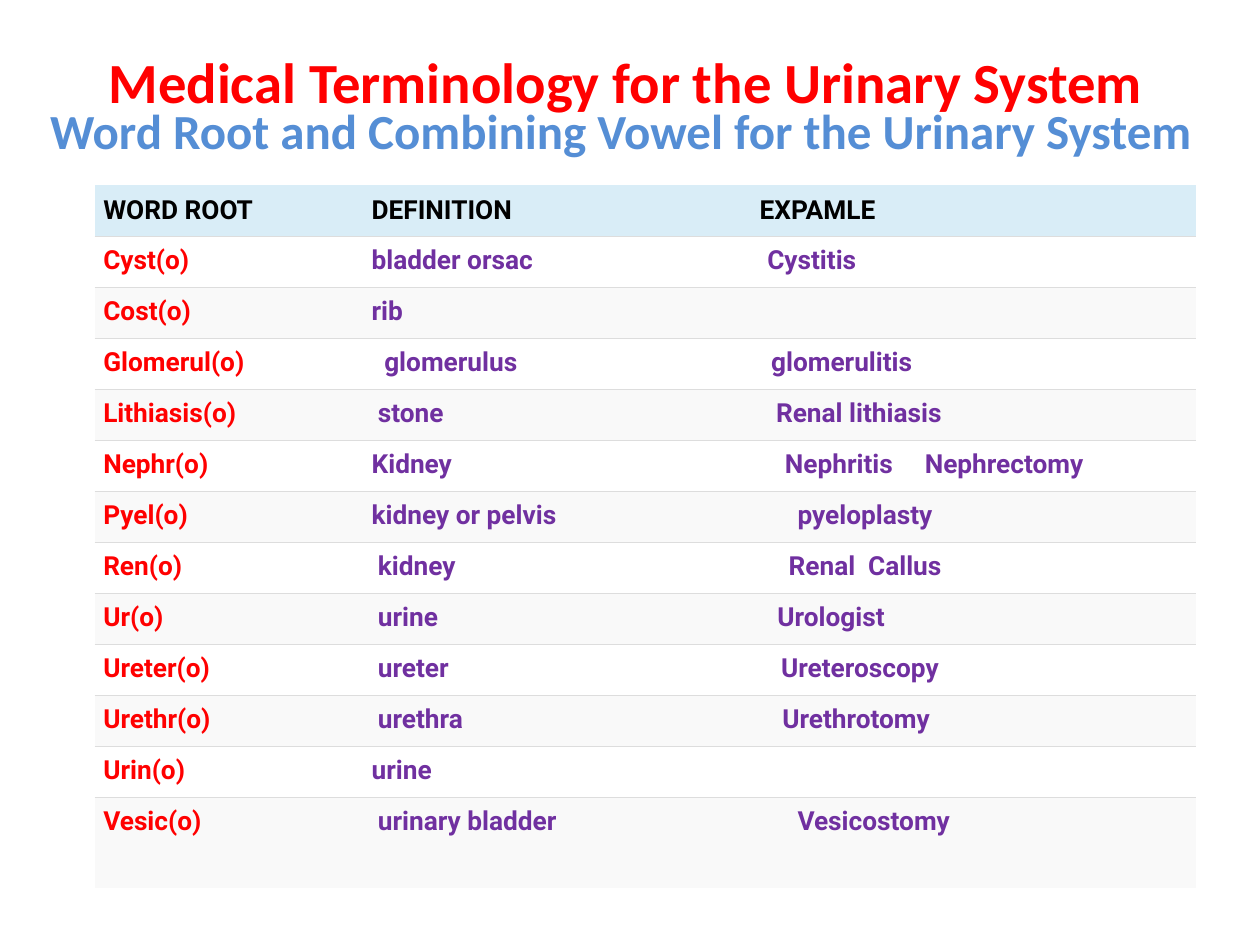
from lxml import etree
from pptx import Presentation
from pptx.dml.color import RGBColor
from pptx.enum.text import MSO_ANCHOR, PP_ALIGN
from pptx.oxml.ns import qn
from pptx.util import Inches, Pt

CENTER, LEFT = PP_ALIGN.CENTER, PP_ALIGN.LEFT
TOP, MIDDLE = MSO_ANCHOR.TOP, MSO_ANCHOR.MIDDLE
RED, BLUE, PURPLE, BLACK = "FF0000", "558ED5", "7030A0", "000000"
HEADER_FILL, ROW_FILLS, RULE = "D9EDF7", ("FFFFFF", "F9F9F9"), "DDDDDD"
NO_STYLE = "{2D5ABB26-0587-4C30-8999-92F81FD0307C}"


def color(value):
    return RGBColor.from_string(value)


def write(tf, text, size=15, font="Roboto", fill=BLACK, align=LEFT, tabs=()):
    """Write one bold paragraph; tabs are distances in inches."""
    p = tf.paragraphs[0]
    p.alignment = align
    if tabs:
        tab_list = etree.SubElement(p._p.get_or_add_pPr(), qn("a:tabLst"))
        for pos in tabs:
            etree.SubElement(tab_list, qn("a:tab"), pos=str(Inches(pos)), algn="l")
    r = p.add_run()
    r.text = text
    r.font.name, r.font.size, r.font.bold = font, Pt(size), True
    r.font.color.rgb = color(fill)


prs = Presentation()
prs.slide_width, prs.slide_height = Inches(10), Inches(7.5)
s = prs.slides.add_slide(prs.slide_layouts[6])

# Headings: text, left, top, width, height, size, colour
headings = [
    ("Medical Terminology for the Urinary System", 0.12, 0.37, 9.69, 0.55, 32.4, RED),
    ("Word Root and Combining Vowel for the Urinary System", 0.12, 0.8, 9.61, 0.48, 28, BLUE),
]
for text, left, top, width, height, size, fill in headings:
    tf = s.shapes.add_textbox(Inches(left), Inches(top), Inches(width), Inches(height)).text_frame
    tf.word_wrap = True
    tf.margin_left = tf.margin_right = tf.margin_top = tf.margin_bottom = 0
    write(tf, text, size=size, font="Calibri", fill=fill, align=CENTER)

# Table rows: word root, definition and example, tab stops
rows = [
    ("WORD ROOT", "DEFINITION\tEXPAMLE", (3.08,)),
    ("Cyst(o)", "bladder orsac\tCystitis", (3.14,)),
    ("Cost(o)", "rib", ()),
    ("Glomerul(o)", "\tglomerulus\tglomerulitis", (0.1, 3.17)),
    ("Lithiasis(o)", "\tstone\tRenal lithiasis", (0.05, 3.21)),
    ("Nephr(o)", "Kidney\tNephritis\tNephrectomy", (3.28, 4.39)),
    ("Pyel(o)", "kidney or pelvis\tpyeloplasty", (3.38,)),
    ("Ren(o)", "\tkidney\tRenal\tCallus", (0.05, 3.31, 3.94)),
    ("Ur(o)", "\turine\tUrologist", (0.05, 3.22)),
    ("Ureter(o)", "\tureter\tUreteroscopy", (0.05, 3.25)),
    ("Urethr(o)", "\turethra\tUrethrotomy", (0.05, 3.26)),
    ("Urin(o)", "urine", ()),
    ("Vesic(o)", "\turinary bladder\tVesicostomy", (0.05, 3.38)),
]
last = len(rows) - 1
table_height, last_height = Inches(5.58), Inches(0.72)
table = s.shapes.add_table(len(rows), 2, Inches(0.75), Inches(1.47),
                           Inches(8.74), table_height).table
table.horz_banding = False
table._tbl.tblPr.find(qn("a:tableStyleId")).text = NO_STYLE
for column, width in zip(table.columns, (2.13, 6.61)):
    column.width = Inches(width)

for i, (root, meaning, tabs) in enumerate(rows):
    header = i == 0
    table.rows[i].height = last_height if i == last else (table_height - last_height) // last
    texts = ((root, BLACK if header else RED, ()),
             (meaning, BLACK if header else PURPLE, tabs))
    for j, (text, fill, stops) in enumerate(texts):
        cell = table.cell(i, j)
        cell.margin_left = cell.margin_right = Inches(0.07)
        cell.margin_top = cell.margin_bottom = Inches(0.07)
        cell.vertical_anchor = MIDDLE if header else TOP
        cell.fill.solid()
        cell.fill.fore_color.rgb = color(HEADER_FILL if header else ROW_FILLS[(i - 1) % 2])
        write(cell.text_frame, text, fill=fill, tabs=stops)
        # Rules between rows only
        edges = [tag for tag, shown in (("a:lnT", i > 0), ("a:lnB", i < last)) if shown]
        for k, tag in enumerate(edges):
            ln = etree.Element(qn(tag), w=str(Pt(0.75)))
            solid = etree.SubElement(ln, qn("a:solidFill"))
            etree.SubElement(solid, qn("a:srgbClr"), val=RULE)
            cell._tc.get_or_add_tcPr().insert(k, ln)

prs.save("out.pptx")
